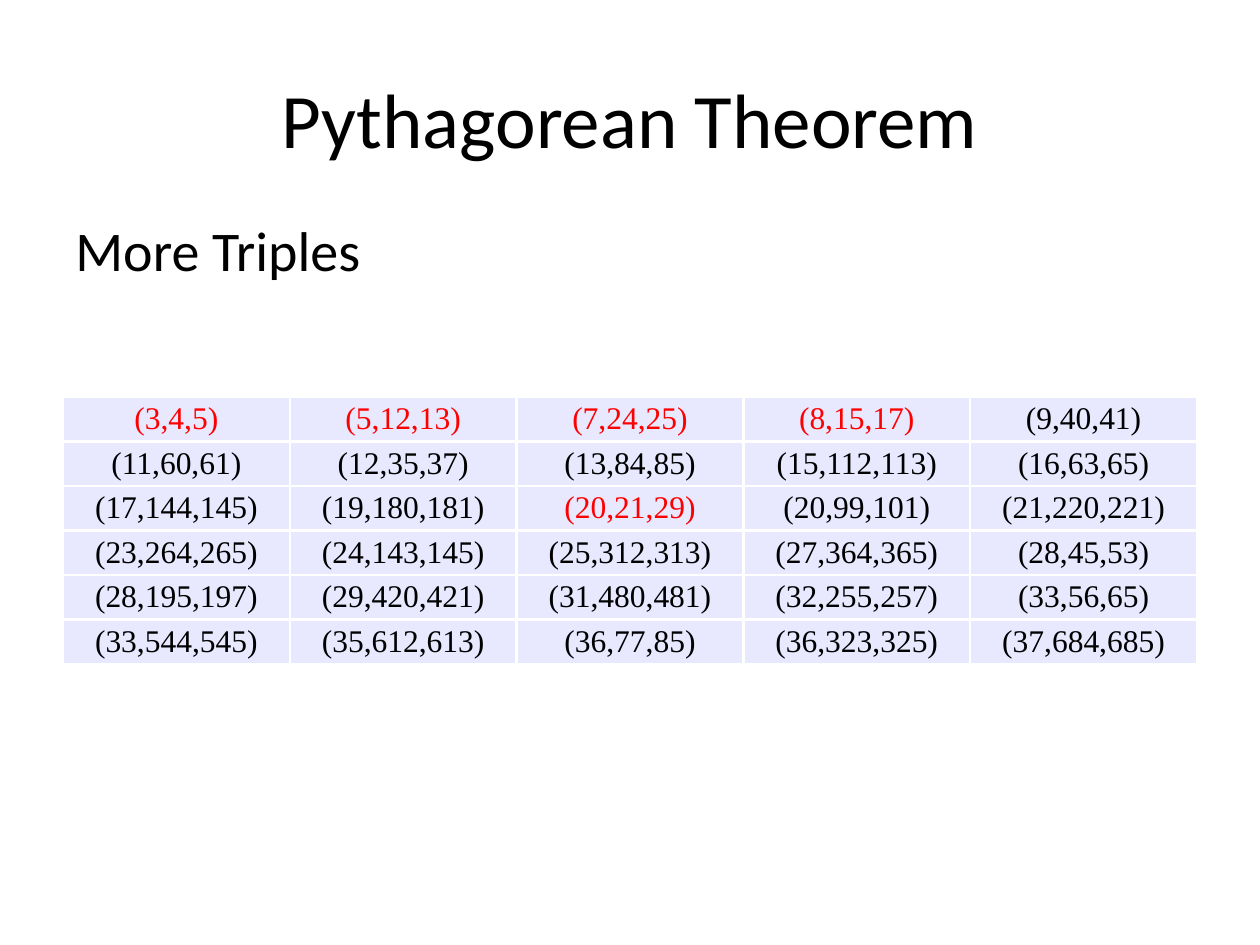
"""Builds a slide with a table of Pythagorean triples."""
from dataclasses import dataclass
from lxml.etree import SubElement
from pptx import Presentation
from pptx.dml.color import RGBColor
from pptx.enum.text import MSO_ANCHOR, PP_ALIGN
from pptx.oxml.ns import qn
from pptx.util import Inches, Pt


@dataclass(frozen=True)
class Theme:
    ink: str = "000000"
    red: str = "FF0000"
    cell: str = "E8E8FF"
    rule: str = "FFFFFF"
    sans: str = "Calibri"
    serif: str = "Times New Roman"
    title: int = 44
    body: int = 32
    small: int = 18


theme = Theme()


def write(frame, text, font, size, color, align):
    para = frame.paragraphs[0]
    para.alignment = align
    run = para.add_run()
    run.text = text
    run.font.name = font
    run.font.size = Pt(size)
    run.font.color.rgb = RGBColor.from_string(color)
    return para


def edge(cell, color, width):
    props = cell._tc.get_or_add_tcPr()
    for side in ("lnL", "lnR", "lnT", "lnB"):
        line = SubElement(props, qn(f"a:{side}"), w=str(Pt(width)))
        fill = SubElement(line, qn("a:solidFill"))
        SubElement(fill, qn("a:srgbClr"), val=color)


triples = [
    ["(3,4,5)", "(5,12,13)", "(7,24,25)", "(8,15,17)", "(9,40,41)"],
    ["(11,60,61)", "(12,35,37)", "(13,84,85)", "(15,112,113)", "(16,63,65)"],
    ["(17,144,145)", "(19,180,181)", "(20,21,29)", "(20,99,101)", "(21,220,221)"],
    ["(23,264,265)", "(24,143,145)", "(25,312,313)", "(27,364,365)", "(28,45,53)"],
    ["(28,195,197)", "(29,420,421)", "(31,480,481)", "(32,255,257)", "(33,56,65)"],
    ["(33,544,545)", "(35,612,613)", "(36,77,85)", "(36,323,325)", "(37,684,685)"],
]
marked = {"(3,4,5)", "(5,12,13)", "(7,24,25)", "(8,15,17)", "(20,21,29)"}

deck = Presentation()
deck.slide_width, deck.slide_height = Inches(10), Inches(7.5)
wide, high = deck.slide_width, deck.slide_height
slide = deck.slides.add_slide(deck.slide_layouts[6])
left, span = int(wide * 0.05), int(wide * 0.9)

parts = [
    ("Pythagorean Theorem", 0.04, 0.17, theme.title, PP_ALIGN.CENTER, MSO_ANCHOR.MIDDLE),
    ("More Triples", 0.23, 0.72, theme.body, PP_ALIGN.LEFT, MSO_ANCHOR.TOP),
]
for text, top, tall, size, align, anchor in parts:
    box = slide.shapes.add_textbox(left, int(high * top), span, int(high * tall))
    frame = box.text_frame
    frame.word_wrap = True
    frame.vertical_anchor = anchor
    para = write(frame, text, theme.sans, size, theme.ink, align)
    if size == theme.body:
        para.line_spacing = 0.9
        para.space_before = Pt(size * 0.2)

rows, cols = len(triples), len(triples[0])
step = Inches(0.34)
table = slide.shapes.add_table(rows, cols, left, int(high * 0.42), span, step * rows).table
table.first_row = table.horz_banding = False
for col in table.columns:
    col.width = span // cols
for row, line in zip(table.rows, triples):
    row.height = step
    for cell, text in zip(row.cells, line):
        edge(cell, theme.rule, 1.5)
        cell.fill.solid()
        cell.fill.fore_color.rgb = RGBColor.from_string(theme.cell)
        cell.vertical_anchor = MSO_ANCHOR.MIDDLE
        cell.margin_left = cell.margin_right = Pt(1.9)
        cell.margin_top = cell.margin_bottom = Pt(1.9)
        color = theme.red if text in marked else theme.ink
        write(cell.text_frame, text, theme.serif, theme.small, color, PP_ALIGN.CENTER)

deck.save("out.pptx")
